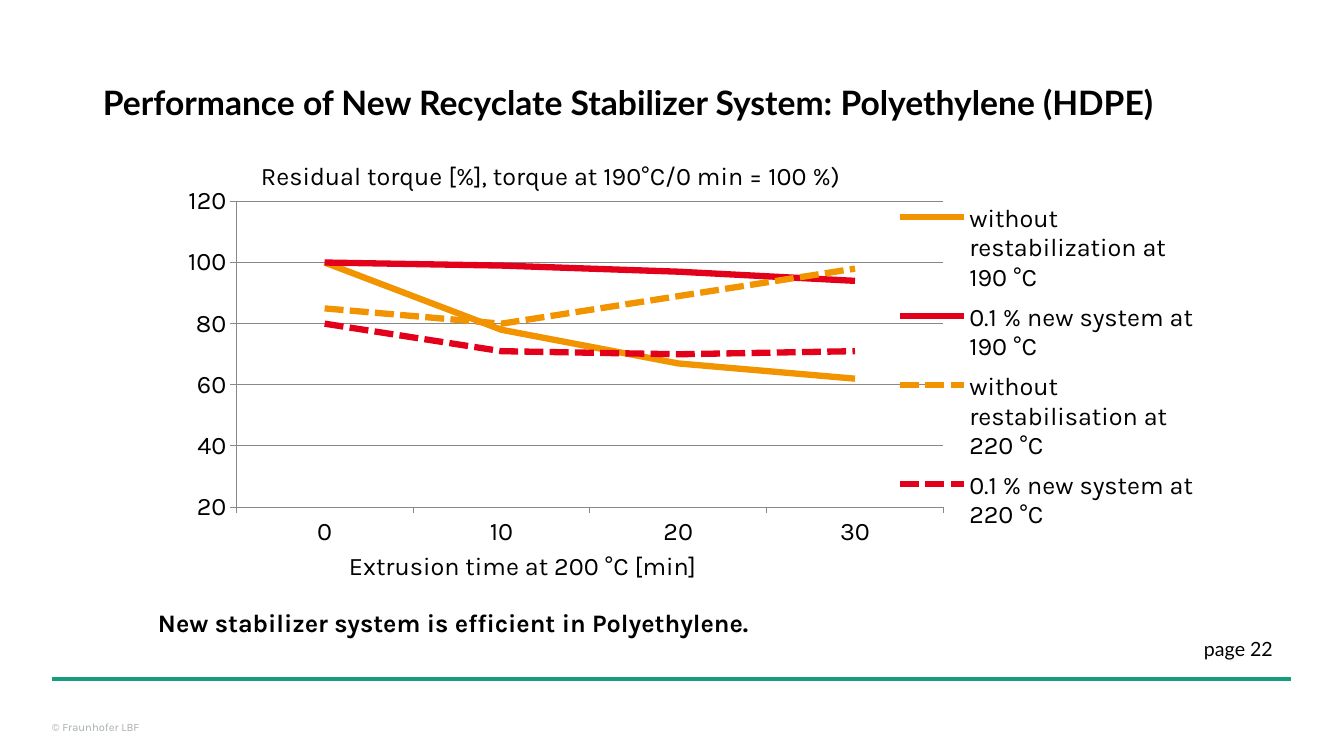
"""Builds a slide with a line chart on the residual torque of stabilized HDPE recyclate."""
import pptx
import pptx.chart.data
import pptx.dml.color
import pptx.enum.chart
import pptx.enum.dml
import pptx.enum.text
import pptx.oxml
import pptx.oxml.ns
import pptx.util

PX = 914400 / 100.8
THEME = {
    "heading_font": "Lato", "body_font": "Karla",
    "black": "000000", "gray": "A8AFAF", "grid": "888888", "green": "179C7D",
    "orange": "F29400", "red": "E2001A",
    "title_size": 24, "body_size": 18, "page_size": 14, "small_size": 8,
    "series_line": 4.5, "rule_line": 2.5, "grid_line": 0.75,
}


def style_font(font, face, size, color, bold=False):
    font.name = THEME[face]
    font.size = pptx.util.Pt(THEME[size])
    font.color.rgb = pptx.dml.color.RGBColor.from_string(THEME[color])
    font.bold = bold


def set_layout(parent, index, inner, **fractions):
    for old in parent.findall(pptx.oxml.ns.qn("c:layout")):
        parent.remove(old)
    target = '<c:layoutTarget val="inner"/>' if inner else ""
    modes = "".join(f'<c:{key}Mode val="edge"/>' for key in "xy")
    values = "".join(f'<c:{key} val="{value}"/>' for key, value in fractions.items())
    parent.insert(index, pptx.oxml.parse_xml(
        f'<c:layout {pptx.oxml.ns.nsdecls("c")}><c:manualLayout>'
        f"{target}{modes}{values}</c:manualLayout></c:layout>"))


deck = pptx.Presentation()
deck.slide_width, deck.slide_height = round(1344 * PX), round(756 * PX)
page = deck.slides.add_slide(deck.slide_layouts[5])

rule = page.shapes.add_connector(
    pptx.enum.shapes.MSO_CONNECTOR.STRAIGHT, *[round(n * PX) for n in (52, 679, 1291, 679)])
rule.line.color.rgb = pptx.dml.color.RGBColor.from_string(THEME["green"])
rule.line.width = pptx.util.Pt(THEME["rule_line"])
rule._element.spPr.append(pptx.oxml.parse_xml(f'<a:effectLst {pptx.oxml.ns.nsdecls("a")}/>'))

series_rows = [
    ("without restabilization at 190 °C", (100, 78, 67, 62), "orange", False),
    ("0.1 % new system at 190 °C", (100, 99, 97, 94), "red", False),
    ("without restabilisation at 220 °C", (85, 80, 89, 98), "orange", True),
    ("0.1 % new system at 220 °C", (80, 71, 70, 71), "red", True),
]
torque_data = pptx.chart.data.CategoryChartData()
torque_data.categories = ["0", "10", "20", "30"]
for name, values, color, dashed in series_rows:
    torque_data.add_series(name, values)
chart = page.shapes.add_chart(
    pptx.enum.chart.XL_CHART_TYPE.LINE,
    *[round(n * PX) for n in (171, 179, 1088, 373)], torque_data).chart
chart.has_title = False
style_font(chart.font, "body_font", "body_size", "black")
chart.plots[0].vary_by_categories = False
for series, (name, values, color, dashed) in zip(chart.plots[0].series, series_rows):
    series.smooth = False
    series.marker.style = pptx.enum.chart.XL_MARKER_STYLE.NONE
    series.format.line.color.rgb = pptx.dml.color.RGBColor.from_string(THEME[color])
    series.format.line.width = pptx.util.Pt(THEME["series_line"])
    if dashed:
        series.format.line.dash_style = pptx.enum.dml.MSO_LINE.SQUARE_DOT

torque_axis = chart.value_axis
torque_axis.minimum_scale, torque_axis.maximum_scale = 20, 120
torque_axis.major_unit = 20
torque_axis.has_major_gridlines = True
for axis in (torque_axis, chart.category_axis):
    axis.major_tick_mark = pptx.enum.chart.XL_TICK_MARK.OUTSIDE
    axis.minor_tick_mark = pptx.enum.chart.XL_TICK_MARK.NONE
for part in (torque_axis, chart.category_axis, torque_axis.major_gridlines):
    part.format.line.color.rgb = pptx.dml.color.RGBColor.from_string(THEME["grid"])
    part.format.line.width = pptx.util.Pt(THEME["grid_line"])

chart.has_legend = True
chart.legend.position = pptx.enum.chart.XL_LEGEND_POSITION.RIGHT
chart.legend.include_in_layout = False
set_layout(chart._chartSpace.chart.plotArea, 0, True, x=0.06, y=0.06, w=0.65, h=0.82)
set_layout(chart.legend._element, 1, False, x=0.67, y=0.04, w=0.27, h=0.93)

title = page.shapes.title
texts = [
    (title, "Performance of New Recyclate Stabilizer System: Polyethylene (HDPE)",
     (93, 77, 1176, 50), 10, "heading_font", "title_size", "black", True),
    (None, "Residual torque [%], torque at 190°C/0 min = 100 %)",
     (251, 155, 644, 40), 10, "body_font", "body_size", "black", False),
    (None, "Extrusion time at 200 °C [min]",
     (339, 545, 381, 40), 10, "body_font", "body_size", "black", False),
    (None, "New stabilizer system is efficient in Polyethylene.",
     (148, 602, 723, 40), 10, "body_font", "body_size", "black", True),
    (None, "page 22", (1204, 637, 82, 24), 0, "heading_font", "page_size", "black", False),
    (None, "© Fraunhofer LBF", (52, 718, 199, 18), 0, "body_font", "small_size", "gray", False),
]
for holder, words, place, inset, face, size, color, bold in texts:
    left, top, width, height = [round(n * PX) for n in place]
    box = holder or page.shapes.add_textbox(left, top, width, height)
    box.left, box.top, box.width, box.height = left, top, width, height
    frame = box.text_frame
    frame.word_wrap = True
    frame.auto_size = pptx.enum.text.MSO_AUTO_SIZE.NONE
    frame.vertical_anchor = pptx.enum.text.MSO_ANCHOR.MIDDLE
    frame.margin_left = frame.margin_right = round(inset * PX)
    frame.margin_top = frame.margin_bottom = 0
    para = frame.paragraphs[0]
    para.alignment = pptx.enum.text.PP_ALIGN.LEFT
    span = para.add_run()
    span.text = words
    style_font(span.font, face, size, color, bold)

deck.save("out.pptx")
